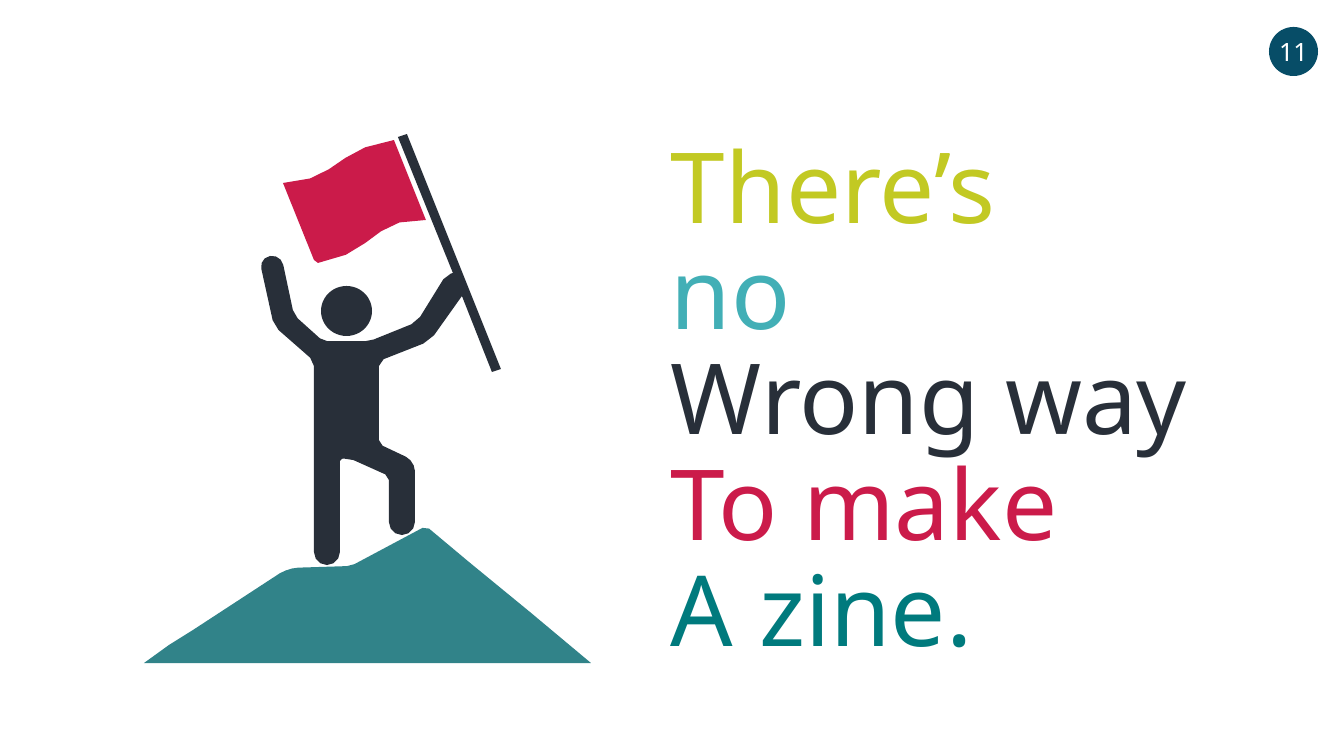
import math
from dataclasses import dataclass

import pptx
import pptx.dml.color
import pptx.enum.shapes
import pptx.enum.text
import pptx.util

PX = 914400 / 100.8  # EMU in one px


@dataclass(frozen=True)
class Theme:
    font: str = "Noto Sans"
    headline_size: float = 70
    headline_leading: float = 75.6
    number_size: float = 18
    white: str = "FFFFFF"
    navy: str = "074D67"
    ink: str = "282F39"
    crimson: str = "CB1B4A"
    hill: str = "318389"
    lime: str = "C2C923"
    aqua: str = "42AFB6"
    teal: str = "007A7D"


def emu(px):
    return pptx.util.Emu(round(px * PX))


def rgb(color):
    return pptx.dml.color.RGBColor.from_string(color)


def cubic(start, control_1, control_2, end, steps):
    """Points along a cubic curve."""
    points = []
    for step in range(steps + 1):
        t = step / steps
        weights = ((1 - t) ** 3, 3 * t * (1 - t) ** 2, 3 * t * t * (1 - t), t ** 3)
        corners = (start, control_1, control_2, end)
        points.append(tuple(sum(w * c[axis] for w, c in zip(weights, corners))
                            for axis in (0, 1)))
    return points


def toward(start, end, distance):
    ratio = distance / math.dist(start, end)
    return tuple(a + (b - a) * ratio for a, b in zip(start, end))


def rounded(vertices):
    """Outline through (x, y, trim) vertices: wide trims are arcs, small ones are cut."""
    points = []
    for index, (x, y, trim) in enumerate(vertices):
        corner = (x, y)
        if not trim:
            points.append(corner)
            continue
        before = vertices[index - 1][:2]
        after = vertices[(index + 1) % len(vertices)][:2]
        points += cubic(toward(corner, before, trim), toward(corner, before, trim * 0.45),
                        toward(corner, after, trim * 0.45), toward(corner, after, trim),
                        steps=3 if trim >= 10 else 1)
    return points


class SlideBuilder:
    def __init__(self, presentation, theme):
        self.theme = theme
        self.slide = presentation.slides.add_slide(presentation.slide_layouts[6])

    def paint(self, shape, color):
        shape.shadow.inherit = False
        shape.fill.solid()
        shape.fill.fore_color.rgb = rgb(color)
        shape.line.fill.background()

    def outline(self, points, color):
        (start_x, start_y), *rest = [(emu(x), emu(y)) for x, y in points]
        builder = self.slide.shapes.build_freeform(start_x, start_y, scale=1.0)
        builder.add_line_segments(rest, close=True)
        self.paint(builder.convert_to_shape(), color)

    def circle(self, left, top, width, height, color):
        shape = self.slide.shapes.add_shape(
            pptx.enum.shapes.MSO_SHAPE.OVAL, emu(left), emu(top), emu(width), emu(height))
        self.paint(shape, color)
        return shape

    def run(self, paragraph, text, size, color):
        run = paragraph.add_run()
        run.text = text
        run.font.name = self.theme.font
        run.font.size = pptx.util.Pt(size)
        run.font.color.rgb = rgb(color)

    def page_number(self, text, left, top, diameter):
        frame = self.circle(left, top, diameter, diameter, self.theme.navy).text_frame
        frame.word_wrap = False
        frame.vertical_anchor = pptx.enum.text.MSO_ANCHOR.MIDDLE
        paragraph = frame.paragraphs[0]
        paragraph.alignment = pptx.enum.text.PP_ALIGN.CENTER
        self.run(paragraph, text, self.theme.number_size, self.theme.white)

    def headline(self, lines, left, top, width, height):
        box = self.slide.shapes.add_textbox(emu(left), emu(top), emu(width), emu(height))
        frame = box.text_frame
        frame.word_wrap = True
        frame.margin_left = emu(10)
        frame.margin_top = emu(3)
        frame.margin_bottom = emu(12)
        frame.auto_size = pptx.enum.text.MSO_AUTO_SIZE.SHAPE_TO_FIT_TEXT
        for index, (text, color) in enumerate(lines):
            paragraph = frame.add_paragraph() if index else frame.paragraphs[0]
            paragraph.line_spacing = pptx.util.Pt(self.theme.headline_leading)
            self.run(paragraph, text, self.theme.headline_size, color)


# Outlines as (x, y, corner trim) in px
HILL = [
    (144, 663, 0), (591, 663, 0), (530, 612, 0), (469, 562, 0), (426, 526, 4),
    (351, 566, 4), (288, 568, 10), (193, 630, 0), (169, 645, 0),
]
CLIMBER = [
    # Flag pole
    (462, 296, 0), (492, 372, 0), (501, 369, 0), (407, 134, 0), (398, 137, 0), (453, 273, 0),
    # Raised arms
    (446, 275, 5), (417, 322, 6), (370, 341, 4), (323, 341, 4), (294, 315, 5),
    (281, 254, 11), (259, 258, 11), (274, 326, 6), (314, 361, 5),
    # Legs
    (314, 565, 13), (340, 565, 13), (340, 459, 2), (349, 458, 5), (389, 476, 4),
    (389, 535, 13), (415, 535, 13), (415, 461, 10), (379, 444, 4),
    # Side and elbow
    (379, 361, 5), (430, 341, 7),
]
FLAG = (cubic((283, 183), (338, 181), (335, 148), (394, 140), steps=5)
        + cubic((426, 220), (372, 217), (375, 254), (318, 263), steps=5)
        + [(314, 260)])


def main():
    theme = Theme()
    presentation = pptx.Presentation()
    presentation.slide_width = emu(1344)
    presentation.slide_height = emu(756)
    builder = SlideBuilder(presentation, theme)

    # Climber on the hill
    builder.outline(rounded(HILL), theme.hill)
    builder.outline(rounded(CLIMBER), theme.ink)
    builder.outline(FLAG, theme.crimson)
    builder.circle(321, 286, 51, 50, theme.ink)

    # Page number and headline
    builder.page_number("11", 1269, 27, 49)
    builder.headline([
        ("There’s", theme.lime),
        ("no", theme.aqua),
        ("Wrong way", theme.ink),
        ("To make", theme.crimson),
        ("A zine.", theme.teal),
    ], 661, 134, 578, 544)

    presentation.save("out.pptx")


if __name__ == "__main__":
    main()
